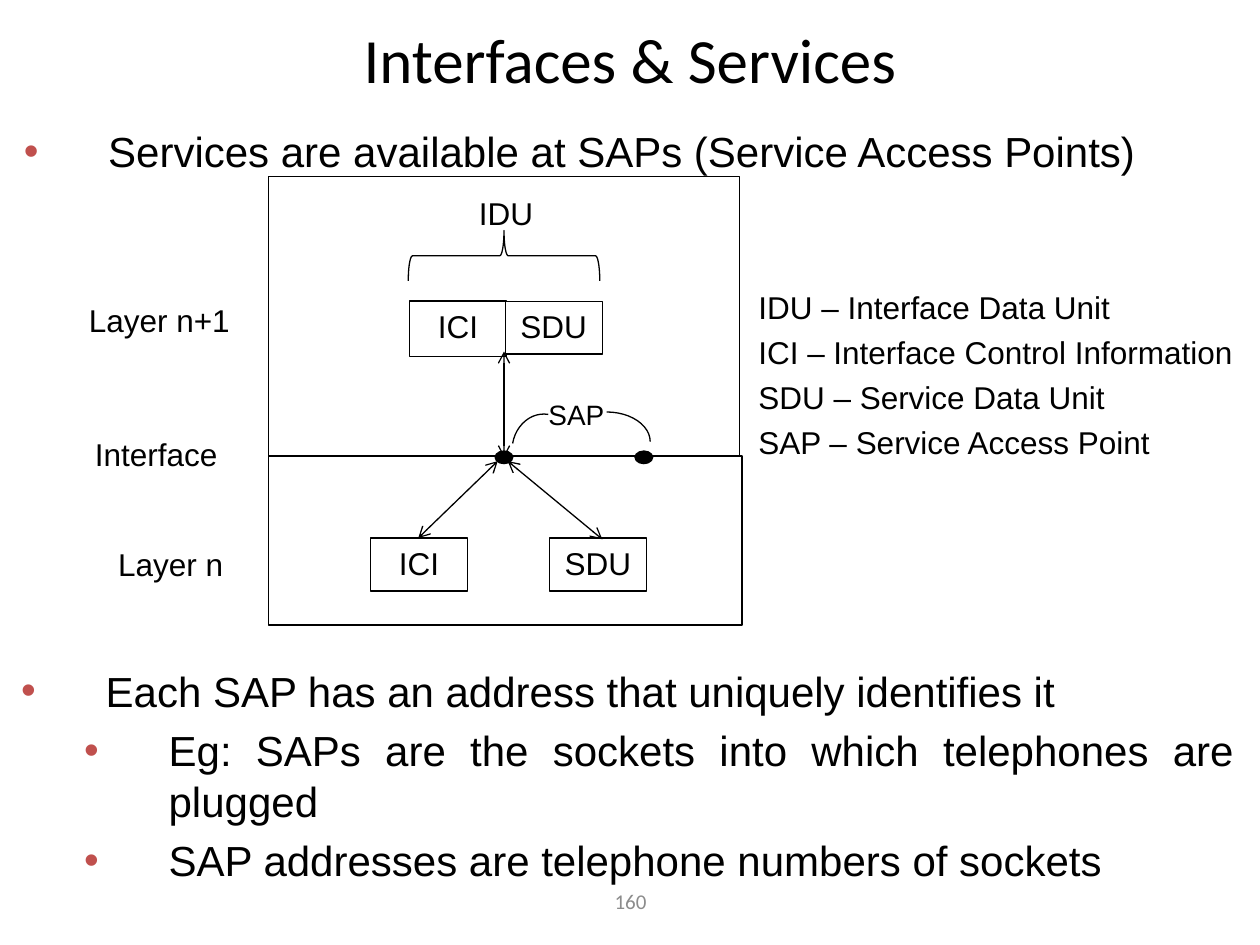
import pptx
import pptx.util
import pptx.dml.color
import pptx.enum.shapes
import pptx.enum.text
import pptx.oxml
import pptx.oxml.ns
from lxml import etree

Inches, Pt = pptx.util.Inches, pptx.util.Pt
SHAPE = pptx.enum.shapes.MSO_SHAPE
ALIGN = pptx.enum.text.PP_ALIGN
ANCHOR = pptx.enum.text.MSO_ANCHOR

THEME = {
    "ink": "000000", "paper": "FFFFFF", "bullet": "C0504D", "muted": "8C8C8C",
    "heading_font": "Calibri", "body_font": "Arial",
    "title": 36, "body": 24, "label": 18, "small": 16, "footer": 12,
    "line": 0.75, "hanging": 0.67, "level_step": 0.5, "space_before": 0.22,
}

TITLE = "Interfaces & Services"
PAGE_NUMBER = "160"

# (left, top, width, height), then (level, text) pairs
BULLETS = [
    ((0.09, 0.95, 9.82, 0.55),
     [(0, "Services are available at SAPs (Service Access Points)")]),
    ((0.07, 5.23, 9.82, 1.97),
     [(0, "Each SAP has an address that uniquely identifies it"),
      (1, "Eg: SAPs are the sockets into which telephones are plugged"),
      (1, "SAP addresses are telephone numbers of sockets")]),
]
LEGEND_AREA = (5.92, 2.24, 3.98, 1.49)
LEGEND = [
    "IDU – Interface Data Unit",
    "ICI – Interface Control Information",
    "SDU – Service Data Unit",
    "SAP – Service Access Point",
]
LAYER_FRAMES = [(2.13, 1.4, 3.74, 2.23), (2.13, 3.62, 3.76, 1.34)]
UNITS = [
    ("ICI", (3.25, 2.39, 0.77, 0.44)),
    ("SDU", (4.01, 2.39, 0.77, 0.42)),
    ("ICI", (2.94, 4.27, 0.77, 0.42)),
    ("SDU", (4.36, 4.27, 0.77, 0.42)),
]
IDU_BRACE = (3.8, 1.27, 0.4, 1.52)
LABELS = [
    ("IDU", (3.59, 1.49, 0.85, 0.4), "label"),
    ("Layer n+1", (0.46, 2.34, 1.61, 0.4), "label"),
    ("Interface", (0.38, 3.4, 1.72, 0.4), "label"),
    ("Layer n", (0.74, 4.28, 1.23, 0.4), "label"),
    ("SAP", (4.14, 3.11, 0.87, 0.37), "small"),
]
ACCESS_POINTS = [(3.93, 3.58, 0.14, 0.1), (5.04, 3.58, 0.14, 0.1)]
SAP_ARCS = [((4.47, 3.27, 0.69, 0.47), 0), ((4.03, 3.32, 0.55, 0.48), 279.7)]
ARROWS = [
    ((4.03, 3.66), (4.78, 4.28)),
    ((3.95, 3.66), (3.32, 4.27)),
    ((4, 3.63), (4, 2.79)),
]


def rgb(name):
    return pptx.dml.color.RGBColor.from_string(THEME[name])


def inches(values):
    return [Inches(value) for value in values]


def style(paragraph, size, align=ALIGN.CENTER, font="body_font", color="ink"):
    paragraph.alignment = align
    for run in paragraph.runs:
        run.font.size = Pt(THEME[size])
        run.font.name = THEME[font]
        run.font.color.rgb = rgb(color)


def add_text(slide, area, text, size, **looks):
    frame = slide.shapes.add_textbox(*inches(area)).text_frame
    frame.word_wrap = True
    frame.text = text
    for paragraph in frame.paragraphs:
        style(paragraph, size, **looks)
    return frame


def add_list(slide, area, items, size, bulleted):
    """Justified paragraphs with a hanging indent, one per (level, text)."""
    text = "\n".join(line for _, line in items)
    frame = add_text(slide, area, text, size, align=ALIGN.JUSTIFY)
    for paragraph, (level, _) in zip(frame.paragraphs, items):
        paragraph.level = level
        paragraph.space_before = Pt(THEME[size] * THEME["space_before"])
        properties = paragraph._p.get_or_add_pPr()
        indent = THEME["hanging"] + level * THEME["level_step"]
        properties.set("marL", str(Inches(indent)))
        properties.set("indent", str(-Inches(THEME["hanging"])))
        if bulleted:
            qn = pptx.oxml.ns.qn
            color = etree.SubElement(properties, qn("a:buClr"))
            etree.SubElement(color, qn("a:srgbClr"), val=THEME["bullet"])
            etree.SubElement(properties, qn("a:buFont"), typeface=THEME["body_font"])
            etree.SubElement(properties, qn("a:buChar"), char="•")


def add_outline(slide, kind, area, fill="paper", rotation=0):
    shape = slide.shapes.add_shape(kind, *inches(area))
    shape.shadow.inherit = False
    shape.rotation = rotation
    if fill:
        shape.fill.solid()
        shape.fill.fore_color.rgb = rgb(fill)
    else:
        shape.fill.background()
    shape.line.color.rgb = rgb("ink")
    shape.line.width = Pt(THEME["line"])
    return shape


def add_double_arrow(slide, start, end):
    arrow = slide.shapes.add_connector(
        pptx.enum.shapes.MSO_CONNECTOR.STRAIGHT, *inches(start + end))
    arrow.line.color.rgb = rgb("ink")
    arrow.line.width = Pt(THEME["line"])
    line = arrow.line._get_or_add_ln()
    for tip in ("a:headEnd", "a:tailEnd"):
        etree.SubElement(line, pptx.oxml.ns.qn(tip), type="arrow")
    etree.SubElement(arrow._element.spPr, pptx.oxml.ns.qn("a:effectLst"))


def main():
    deck = pptx.Presentation()
    deck.slide_width, deck.slide_height = Inches(10), Inches(7.5)
    slide = deck.slides.add_slide(deck.slide_layouts[5])

    title = slide.shapes.title
    title.left, title.top, title.width, title.height = inches((0, 0.14, 10, 0.64))
    title.text_frame.text = TITLE
    title.text_frame.vertical_anchor = ANCHOR.MIDDLE
    style(title.text_frame.paragraphs[0], "title", font="heading_font")

    for area, items in BULLETS:
        add_list(slide, area, items, "body", bulleted=True)

    for area in LAYER_FRAMES:
        add_outline(slide, SHAPE.RECTANGLE, area)
    for name, area in UNITS:
        frame = add_outline(slide, SHAPE.RECTANGLE, area).text_frame
        frame.text = name
        frame.vertical_anchor = ANCHOR.TOP
        style(frame.paragraphs[0], "label")
    add_outline(slide, SHAPE.RIGHT_BRACE, IDU_BRACE, rotation=270)
    for area in ACCESS_POINTS:
        add_outline(slide, SHAPE.OVAL, area, fill="ink")
    for area, rotation in SAP_ARCS:
        add_outline(slide, SHAPE.ARC, area, fill=None, rotation=rotation)
    for text, area, size in LABELS:
        add_text(slide, area, text, size)
    for start, end in ARROWS:
        add_double_arrow(slide, start, end)

    add_list(slide, LEGEND_AREA, [(0, line) for line in LEGEND], "label", bulleted=False)
    footer = add_text(slide, (3.42, 6.95, 3.17, 0.4), PAGE_NUMBER, "footer",
                      font="heading_font", color="muted")
    footer.vertical_anchor = ANCHOR.MIDDLE

    deck.save("out.pptx")


if __name__ == "__main__":
    main()
